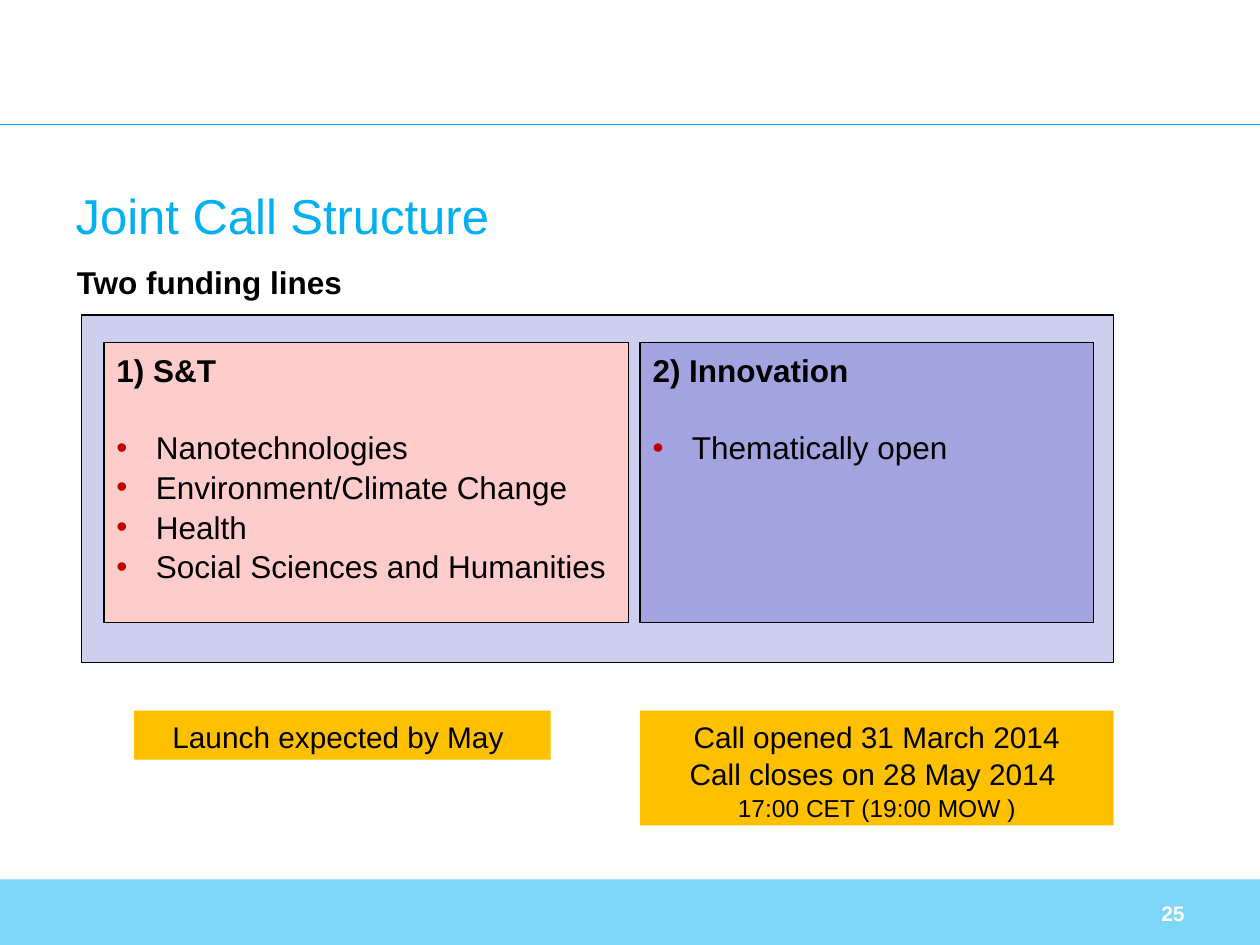
"""Build the Joint Call Structure slide."""
from lxml import etree
from pptx import Presentation
from pptx.dml.color import RGBColor
from pptx.enum.shapes import MSO_CONNECTOR, MSO_SHAPE
from pptx.enum.text import MSO_ANCHOR, PP_ALIGN
from pptx.oxml import parse_xml
from pptx.oxml.ns import nsdecls, qn
from pptx.util import Pt


def write(paragraph, text, size, color="000000", bold=False, align=PP_ALIGN.LEFT):
    paragraph.text = text
    paragraph.alignment = align
    for run in paragraph.runs:
        run.font.name = "Arial"
        run.font.size = Pt(size)
        run.font.bold = bold
        run.font.color.rgb = RGBColor.from_string(color)


def add_box(left, top, width, height, fill, line=None):
    box = slide.shapes.add_shape(MSO_SHAPE.RECTANGLE, Pt(left), Pt(top), Pt(width), Pt(height))
    box.shadow.inherit = False
    box.fill.solid()
    box.fill.fore_color.rgb = RGBColor.from_string(fill)
    if line:
        box.line.color.rgb = RGBColor.from_string(line)
        box.line.width = Pt(0.75)
    else:
        box.line.fill.background()
    box.text_frame.word_wrap = True
    box.text_frame.vertical_anchor = MSO_ANCHOR.TOP
    return box


prs = Presentation()
prs.slide_width, prs.slide_height = Pt(720), Pt(540)
slide = prs.slides.add_slide(prs.slide_layouts[5])

footer = add_box(0, 502.5, 720, 37.5, "00B0F0")
footer_color = footer.fill._xPr.find(qn("a:solidFill"))[0]
etree.SubElement(footer_color, qn("a:alpha"), val="50000")

header_rule = slide.shapes.add_connector(MSO_CONNECTOR.STRAIGHT, 0, Pt(71.3), Pt(720), Pt(71.3))
header_rule.line.color.rgb = RGBColor.from_string("00B0F0")
header_rule.line.width = Pt(0.75)
etree.SubElement(header_rule._element.spPr, qn("a:effectLst"))

title = slide.shapes.title
title.left, title.top, title.width, title.height = Pt(36), Pt(77.8), Pt(648), Pt(90)
title.text_frame.vertical_anchor = MSO_ANCHOR.MIDDLE
write(title.text_frame.paragraphs[0], "Joint Call Structure", 28, "00B0F0")

page_number = slide.shapes.add_textbox(Pt(516), Pt(507.5), Pt(168), Pt(29))
page_number.text_frame.vertical_anchor = MSO_ANCHOR.MIDDLE
page_number.text_frame.word_wrap = True
write(page_number.text_frame.paragraphs[0], "25", 12, "FFFFFF", True, PP_ALIGN.RIGHT)

subtitle = slide.shapes.add_textbox(Pt(36.8), Pt(145.5), Pt(168), Pt(29))
subtitle.text_frame.word_wrap = True
write(subtitle.text_frame.paragraphs[0], "Two funding lines", 18, bold=True)
subtitle.text_frame.paragraphs[0].line_spacing = 1.05

add_box(46.6, 180, 589.6, 198.4, "CECEEF", "000000")

funding_lines = [
    (59.5, 299.8, "FFCCCC", "1) S&T",
     ["Nanotechnologies", "Environment/Climate Change", "Health", "Social Sciences and Humanities"]),
    (365.8, 259.2, "A3A3E0", "2) Innovation", ["Thematically open"]),
]
for left, width, fill, heading, themes in funding_lines:
    frame = add_box(left, 195.8, width, 159.8, fill, "000000").text_frame
    write(frame.paragraphs[0], heading, 18, bold=True)
    frame.paragraphs[0].line_spacing = 1.05
    frame.paragraphs[0].space_after = Pt(21.7)
    for theme in themes:
        item = frame.add_paragraph()
        properties = item._p.get_or_add_pPr()
        properties.set("marL", str(Pt(22.5)))
        properties.set("indent", str(-Pt(22.5)))
        properties.append(parse_xml(f'<a:buClr {nsdecls("a")}><a:srgbClr val="C00000"/></a:buClr>'))
        properties.append(parse_xml(f'<a:buFont {nsdecls("a")} typeface="Arial"/>'))
        properties.append(parse_xml(f'<a:buChar {nsdecls("a")} char="•"/>'))
        write(item, theme, 18)
        item.line_spacing = 1.05

dates = [
    (76.5, 238.2, 28, [("Launch expected by May ", 17)]),
    (365.8, 270.6, 65.5, [("Call opened 31 March 2014", 17), ("Call closes on 28 May 2014 ", 17),
                          ("17:00 CET (19:00 MOW )", 14)]),
]
for left, width, height, rows in dates:
    frame = add_box(left, 406.1, width, height, "FFC000").text_frame
    for index, (text, size) in enumerate(rows):
        row = frame.add_paragraph() if index else frame.paragraphs[0]
        write(row, text, size, align=PP_ALIGN.CENTER)
        row.line_spacing = 1.05

prs.save("out.pptx")
